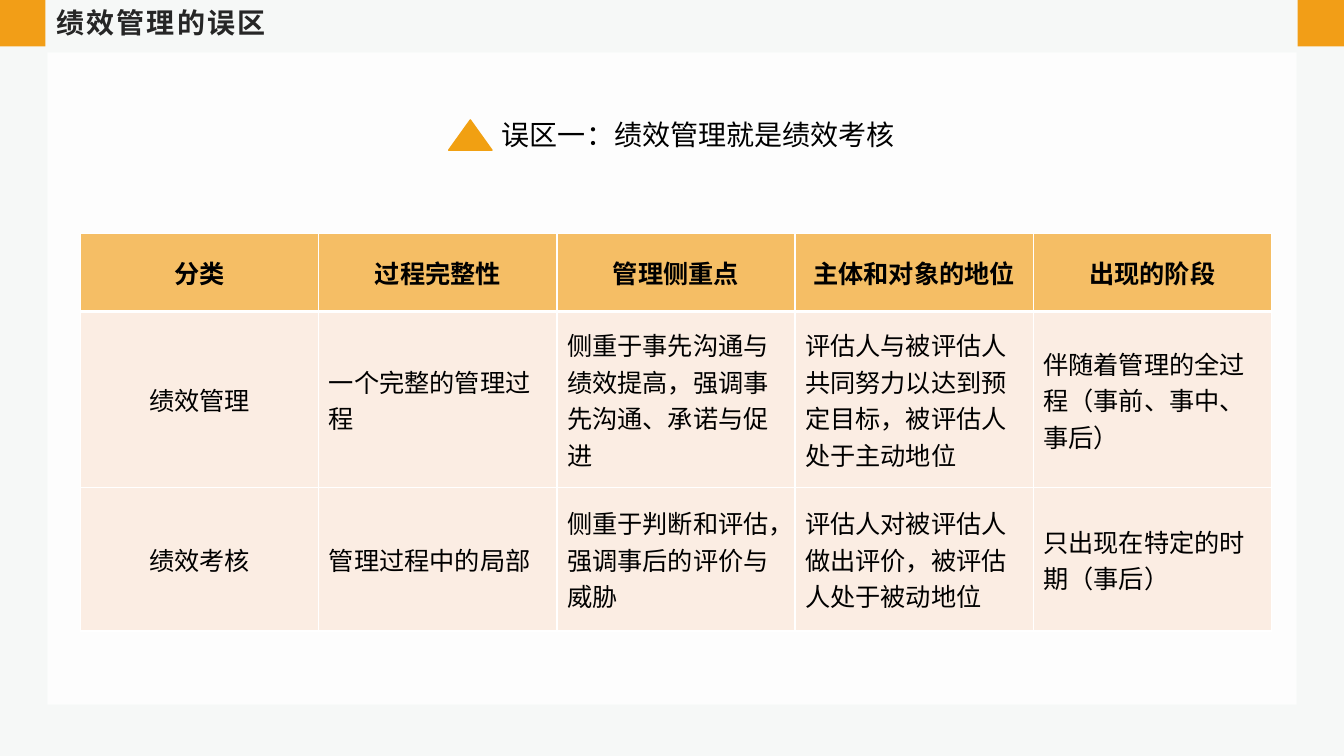
from lxml import etree
from pptx import Presentation
from pptx.dml.color import RGBColor
from pptx.enum.shapes import MSO_SHAPE
from pptx.enum.text import MSO_ANCHOR, MSO_AUTO_SIZE, PP_ALIGN
from pptx.oxml.ns import qn
from pptx.util import Inches, Pt

RECTANGLE, TRIANGLE = MSO_SHAPE.RECTANGLE, MSO_SHAPE.ISOSCELES_TRIANGLE
TOP, MIDDLE = MSO_ANCHOR.TOP, MSO_ANCHOR.MIDDLE
LEFT, CENTER = PP_ALIGN.LEFT, PP_ALIGN.CENTER
NO_AUTOFIT = MSO_AUTO_SIZE.NONE

FONT = "Noto Sans CJK SC"
BACKGROUND = RGBColor(0xF6, 0xF8, 0xF7)
WHITE = RGBColor(0xFF, 0xFF, 0xFF)
BLACK = RGBColor(0, 0, 0)
TITLE_GREY = RGBColor(0x26, 0x26, 0x26)
ORANGE = RGBColor(0xF2, 0x9E, 0x17)
MARKER_ORANGE = RGBColor(0xF1, 0xA0, 0x12)
PEACH = RGBColor(0xFB, 0xE5, 0xD6)

SLIDE_WIDTH, SLIDE_HEIGHT = 13.33, 7.5
CORNER = 0.46
ROW_HEIGHTS = (0.77, 1.75, 1.42)
COMPARISON = (
    ("分类", "过程完整性", "管理侧重点", "主体和对象的地位", "出现的阶段"),
    ("绩效管理", "一个完整的管理过程",
     "侧重于事先沟通与绩效提高，强调事先沟通、承诺与促进",
     "评估人与被评估人共同努力以达到预定目标，被评估人处于主动地位",
     "伴随着管理的全过程（事前、事中、事后）"),
    ("绩效考核", "管理过程中的局部",
     "侧重于判断和评估，强调事后的评价与威胁",
     "评估人对被评估人做出评价，被评估人处于被动地位",
     "只出现在特定的时期（事后）"),
)


def inches(box):
    return [Inches(length) for length in box]


def fill_solid(fill, color, opacity, holder):
    """Fill with a colour; holder is the XML element that contains the fill."""
    fill.solid()
    fill.fore_color.rgb = color
    if opacity < 100:
        color_node = holder.find(qn("a:solidFill")).find(qn("a:srgbClr"))
        etree.SubElement(color_node, qn("a:alpha"), val=str(opacity * 1000))


def add_block(page, preset, box, color, opacity=100):
    block = page.shapes.add_shape(preset, *inches(box))
    block.shadow.inherit = False
    fill_solid(block.fill, color, opacity, block.element.spPr)
    block.line.fill.background()
    return block


def write(para, text, size, color, bold=False, align=LEFT):
    para.alignment = align
    span = para.add_run()
    span.text = text
    span.font.size = Pt(size)
    span.font.bold = bold
    span.font.color.rgb = color
    span.font.name = FONT
    etree.SubElement(span.font._element, qn("a:ea"), typeface=FONT)
    return span


def add_frame(page):
    """Background, translucent panel and the two corner squares."""
    page.background.fill.solid()
    page.background.fill.fore_color.rgb = BACKGROUND
    add_block(page, RECTANGLE, (0.47, 0.52, 12.39, 6.47), WHITE, 81)
    for left in (-0.01, SLIDE_WIDTH - CORNER):
        add_block(page, RECTANGLE, (left, 0, CORNER, CORNER), ORANGE)


def add_title(page, box, text):
    title = page.shapes.title
    title.left, title.top, title.width, title.height = inches(box)
    frame = title.text_frame
    frame.auto_size = NO_AUTOFIT
    frame.vertical_anchor = TOP
    span = write(frame.paragraphs[0], text, 20, TITLE_GREY, bold=True)
    span.font._element.set("spc", "150")


def add_heading(page, box, text):
    """A triangle marker followed by a line of text."""
    left, top, width, height = box
    marker_width, marker_height = 0.43, 0.3
    marker_top = top + (height - marker_height) / 2
    marker = add_block(page, TRIANGLE, (left, marker_top, marker_width, marker_height),
                       MARKER_ORANGE)
    marker.line.color.rgb = MARKER_ORANGE
    marker.line.width = Pt(1)
    label = page.shapes.add_textbox(
        *inches((left + marker_width, top, width - marker_width, height)))
    label.text_frame.word_wrap = True
    write(label.text_frame.paragraphs[0], text, 20, BLACK)


def set_borders(cell, widths):
    """White borders, with widths in points keyed by side."""
    properties = cell._tc.get_or_add_tcPr()
    for index, side in enumerate("LRTB"):
        line = etree.Element(qn(f"a:ln{side}"), w=str(Pt(widths[side])))
        solid = etree.SubElement(line, qn("a:solidFill"))
        etree.SubElement(solid, qn("a:srgbClr"), val=str(WHITE))
        properties.insert(index, line)


def add_comparison(page, box):
    rows, columns = len(COMPARISON), len(COMPARISON[0])
    table = page.shapes.add_table(rows, columns, *inches(box)).table
    for column in table.columns:
        column.width = Inches(box[2] / columns)
    for row, height in zip(table.rows, ROW_HEIGHTS):
        row.height = Inches(height)
    for r, texts in enumerate(COMPARISON):
        header = r == 0
        for c, text in enumerate(texts):
            cell = table.cell(r, c)
            cell.vertical_anchor = MIDDLE
            fill_solid(cell.fill, ORANGE if header else PEACH, 66,
                       cell._tc.get_or_add_tcPr())
            set_borders(cell, {"L": 1, "R": 1, "T": 3 if r == 1 else 1,
                               "B": 3 if header else 1})
            para = cell.text_frame.paragraphs[0]
            para.space_before = Pt(3.6)
            write(para, text, 18, BLACK, bold=header,
                  align=CENTER if header or c == 0 else LEFT)


def main():
    deck = Presentation()
    deck.slide_width, deck.slide_height = inches((SLIDE_WIDTH, SLIDE_HEIGHT))
    page = deck.slides.add_slide(deck.slide_layouts.get_by_name("Title Only"))
    add_frame(page)
    add_title(page, (CORNER, 0, 2.77, 0.44), "绩效管理的误区")
    add_comparison(page, (0.8, 2.32, 11.81, sum(ROW_HEIGHTS)))
    add_heading(page, (4.45, 1.12, 5, 0.44), "误区一：绩效管理就是绩效考核")
    deck.save("out.pptx")


if __name__ == "__main__":
    main()
